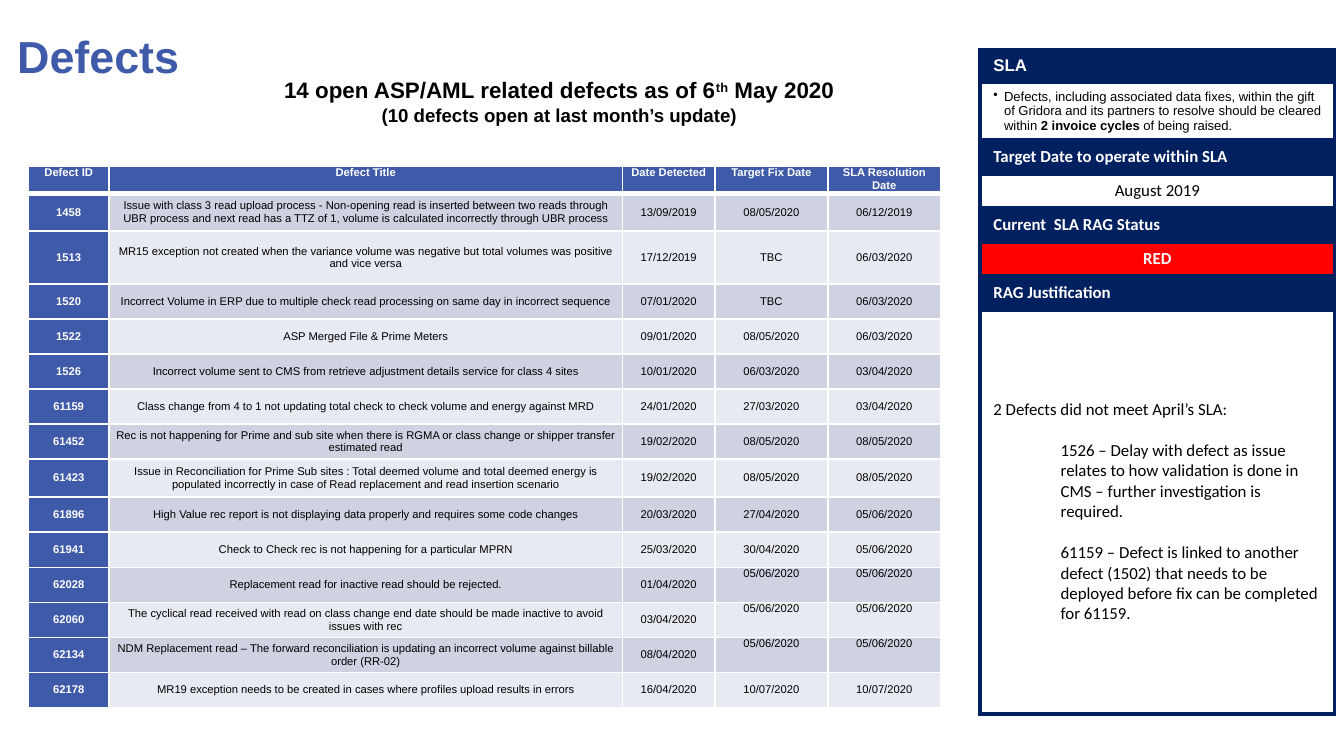
from dataclasses import dataclass
from typing import Optional

from lxml.etree import SubElement
from pptx import Presentation
from pptx.dml.color import RGBColor
from pptx.enum.text import MSO_ANCHOR as ANCHOR, PP_ALIGN as ALIGN
from pptx.oxml import parse_xml
from pptx.oxml.ns import nsdecls, qn
from pptx.slide import Slide
from pptx.table import Table, _Cell as Cell
from pptx.util import Pt

BLUE = RGBColor(0x3E, 0x5A, 0xA8)
NAVY = RGBColor(0x00, 0x20, 0x60)
RED = RGBColor(0xFF, 0x00, 0x00)
WHITE = RGBColor(0xFF, 0xFF, 0xFF)
BLACK = RGBColor(0x00, 0x00, 0x00)
BAND_DARK = RGBColor(0xCE, 0xD2, 0xE1)
BAND_LIGHT = RGBColor(0xE8, 0xEA, 0xF1)


@dataclass
class Style:
    size: float
    color: RGBColor = BLACK
    bold: bool = False
    font: str = "Arial"


@dataclass
class Defect:
    number: str
    title: str
    detected: str
    target: str
    sla: str
    height: float = 18.8
    dates_on_top: bool = False


@dataclass
class SlaRow:
    height: float
    text: str = ""
    fill: RGBColor = WHITE
    style: Optional[Style] = None
    align: ALIGN = ALIGN.LEFT


HEADINGS = ("Defect ID", "Defect Title", "Date Detected", "Target Fix Date",
            "SLA Resolution Date")
COLUMN_WIDTHS = (43, 275.2, 49.5, 60.5, 60.5)
HEADER_HEIGHT = 13.8

DEFECTS = (
    Defect("1458", "Issue with class 3 read upload process - Non-opening read is inserted "
           "between two reads through UBR process and next read has a TTZ of 1, volume is "
           "calculated incorrectly through UBR process",
           "13/09/2019", "08/05/2020", "06/12/2019", 20.2),
    Defect("1513", "MR15 exception not created when the variance volume was negative but "
           "total volumes was positive and vice versa",
           "17/12/2019", "TBC", "06/03/2020", 28.1),
    Defect("1520", "Incorrect Volume in ERP due to multiple check read processing on same "
           "day in incorrect sequence", "07/01/2020", "TBC", "06/03/2020"),
    Defect("1522", "ASP Merged File & Prime Meters",
           "09/01/2020", "08/05/2020", "06/03/2020"),
    Defect("1526", "Incorrect volume sent to CMS from retrieve adjustment details service "
           "for class 4 sites", "10/01/2020", "06/03/2020", "03/04/2020"),
    Defect("61159", "Class change from 4 to 1 not updating total check to check volume and "
           "energy against MRD", "24/01/2020", "27/03/2020", "03/04/2020"),
    Defect("61452", "Rec is not happening for Prime and sub site when there is RGMA or class "
           "change or shipper transfer estimated read",
           "19/02/2020", "08/05/2020", "08/05/2020"),
    Defect("61423", "Issue in Reconciliation for Prime Sub sites : Total deemed volume and "
           "total deemed energy is populated incorrectly in case of Read replacement and "
           "read insertion scenario", "19/02/2020", "08/05/2020", "08/05/2020", 20.4),
    Defect("61896", "High Value rec report is not displaying data properly and requires some "
           "code changes", "20/03/2020", "27/04/2020", "05/06/2020"),
    Defect("61941", "Check to Check rec is not happening for a particular MPRN",
           "25/03/2020", "30/04/2020", "05/06/2020"),
    Defect("62028", "Replacement read for inactive read should be rejected.",
           "01/04/2020", "05/06/2020", "05/06/2020", dates_on_top=True),
    Defect("62060", "The cyclical read received with read on class change end date should be "
           "made inactive to avoid issues with rec",
           "03/04/2020", "05/06/2020", "05/06/2020", dates_on_top=True),
    Defect("62134", "NDM Replacement read – The forward reconciliation is updating an "
           "incorrect volume against billable order (RR-02)",
           "08/04/2020", "05/06/2020", "05/06/2020", dates_on_top=True),
    Defect("62178", "MR19 exception needs to be created in cases where profiles upload "
           "results in errors", "16/04/2020", "10/07/2020", "10/07/2020"),
)

HEADING = Style(9, WHITE, True, "Calibri")
BODY = Style(9, font="Calibri")
SLA_ROWS = (
    SlaRow(17.5, "SLA", NAVY, Style(9, WHITE, True)),
    SlaRow(31),
    SlaRow(18.2, "Target Date to operate within SLA", NAVY, HEADING),
    SlaRow(18.2, "August 2019", style=BODY, align=ALIGN.CENTER),
    SlaRow(18.2, "Current  SLA RAG Status", NAVY, HEADING),
    SlaRow(18.2, "RED", RED, HEADING, ALIGN.CENTER),
    SlaRow(18.2, "RAG Justification", NAVY, HEADING),
    SlaRow(216.7),
)
SLA_TERMS = (
    ("Defects, including associated data fixes, within the gift of Gridora and its partners "
     "to resolve should be cleared within ", False),
    ("2 invoice cycles ", True),
    ("of being raised.", False),
)
JUSTIFICATION = (
    "2 Defects did not meet April’s SLA:",
    "1526 – Delay with defect as issue relates to how validation is done in CMS – further "
    "investigation is required.",
    "61159 – Defect is linked to another defect (1502) that needs to be deployed before fix "
    "can be completed for 61159.",
)


def add_run(p, text: str, style: Style):
    r = p.add_run()
    r.text = text
    r.font.name, r.font.size = style.font, Pt(style.size)
    r.font.bold, r.font.color.rgb = style.bold, style.color
    return r


def set_borders(cell: Cell, color: RGBColor, **widths: float) -> None:
    """Draw the sides L, R, T and B with the given widths in points."""
    tc_pr = cell._tc.get_or_add_tcPr()
    for i, (side, width) in enumerate(widths.items()):
        tc_pr.insert(i, parse_xml(
            f'<a:ln{side} {nsdecls("a")} w="{Pt(width)}"><a:solidFill>'
            f'<a:srgbClr val="{color}"/></a:solidFill></a:ln{side}>'))


def fill_cell(cell: Cell, fill: RGBColor, text: str = "", style: Optional[Style] = None,
              align: ALIGN = ALIGN.CENTER, anchor: ANCHOR = ANCHOR.MIDDLE) -> None:
    cell.fill.solid()
    cell.fill.fore_color.rgb = fill
    cell.vertical_anchor = anchor
    if text:
        p = cell.text_frame.paragraphs[0]
        p.alignment = align
        add_run(p, text, style)


def add_plain_table(slide: Slide, left: float, top: float, widths, heights) -> Table:
    table = slide.shapes.add_table(len(heights), len(widths), Pt(left), Pt(top),
                                   Pt(sum(widths)), Pt(sum(heights))).table
    table.first_row = table.horz_banding = False
    for column, width in zip(table.columns, widths):
        column.width = Pt(width)
    for row, height in zip(table.rows, heights):
        row.height = Pt(height)
    return table


def add_defect_table(slide: Slide) -> None:
    heights = [HEADER_HEIGHT] + [d.height for d in DEFECTS]
    table = add_plain_table(slide, 15.3, 89.3, COLUMN_WIDTHS, heights)
    label, plain = Style(6, WHITE, True), Style(6)
    for c, text in enumerate(HEADINGS):
        fill_cell(table.cell(0, c), BLUE, text, label, anchor=ANCHOR.TOP)
    for i, d in enumerate(DEFECTS, 1):
        band = BAND_DARK if i % 2 else BAND_LIGHT
        fill_cell(table.cell(i, 0), BLUE, d.number, label)
        for c, text in enumerate((d.title, d.detected, d.target, d.sla), 1):
            on_top = d.dates_on_top and c >= 3
            fill_cell(table.cell(i, c), band, text, plain,
                      anchor=ANCHOR.TOP if on_top else ANCHOR.MIDDLE)
    for i, row in enumerate(table.rows):
        for cell in row.cells:
            cell.margin_left = cell.margin_right = Pt(3)
            cell.margin_top = cell.margin_bottom = 0
            set_borders(cell, WHITE, L=1, R=1, T=3 if i == 1 else 1, B=3 if i == 0 else 1)


def add_sla_table(slide: Slide) -> None:
    table = add_plain_table(slide, 525, 26.5, [190], [row.height for row in SLA_ROWS])
    cells = [row.cells[0] for row in table.rows]
    for cell, row in zip(cells, SLA_ROWS):
        fill_cell(cell, row.fill, row.text, row.style, row.align)
        set_borders(cell, NAVY, L=2.25, R=2.25, T=2.25, B=2.25)

    p = cells[1].text_frame.paragraphs[0]
    p.space_after = Pt(4)
    p_pr = p._p.get_or_add_pPr()
    p_pr.set("marL", str(Pt(5.7)))
    p_pr.set("indent", str(-Pt(5.7)))
    SubElement(p_pr, qn("a:buChar")).set("char", "•")
    for text, bold in SLA_TERMS:
        add_run(p, text, Style(7, bold=bold))

    tf = cells[-1].text_frame
    for i, text in enumerate(JUSTIFICATION):
        p = tf.add_paragraph() if i else tf.paragraphs[0]
        if i:
            p.space_before = Pt(11)
            p._p.get_or_add_pPr().set("marL", str(Pt(36)))
        add_run(p, text, BODY)


def add_summary(slide: Slide) -> None:
    tf = slide.shapes.add_textbox(Pt(128), Pt(37.5), Pt(343), Pt(69)).text_frame
    tf.word_wrap = True
    p, style = tf.paragraphs[0], Style(12, bold=True)
    add_run(p, "14 open ASP/AML related defects as of 6", style)
    add_run(p, "th", style)._r.get_or_add_rPr().set("baseline", "30000")
    add_run(p, " May 2020", style)
    add_run(tf.add_paragraph(), "(10 defects open at last month’s update)",
            Style(10, bold=True))
    for p in tf.paragraphs:
        p.alignment = ALIGN.CENTER


def main() -> None:
    prs = Presentation()
    prs.slide_width, prs.slide_height = Pt(720), Pt(405)
    slide = prs.slides.add_slide(prs.slide_layouts[5])
    title = slide.shapes.title
    title.left, title.top, title.width, title.height = Pt(2), Pt(4.5), Pt(670), Pt(50)
    p = title.text_frame.paragraphs[0]
    p.alignment = ALIGN.LEFT
    add_run(p, "Defects", Style(24, BLUE, True))
    add_sla_table(slide)
    add_summary(slide)
    add_defect_table(slide)
    prs.save("out.pptx")


if __name__ == "__main__":
    main()
